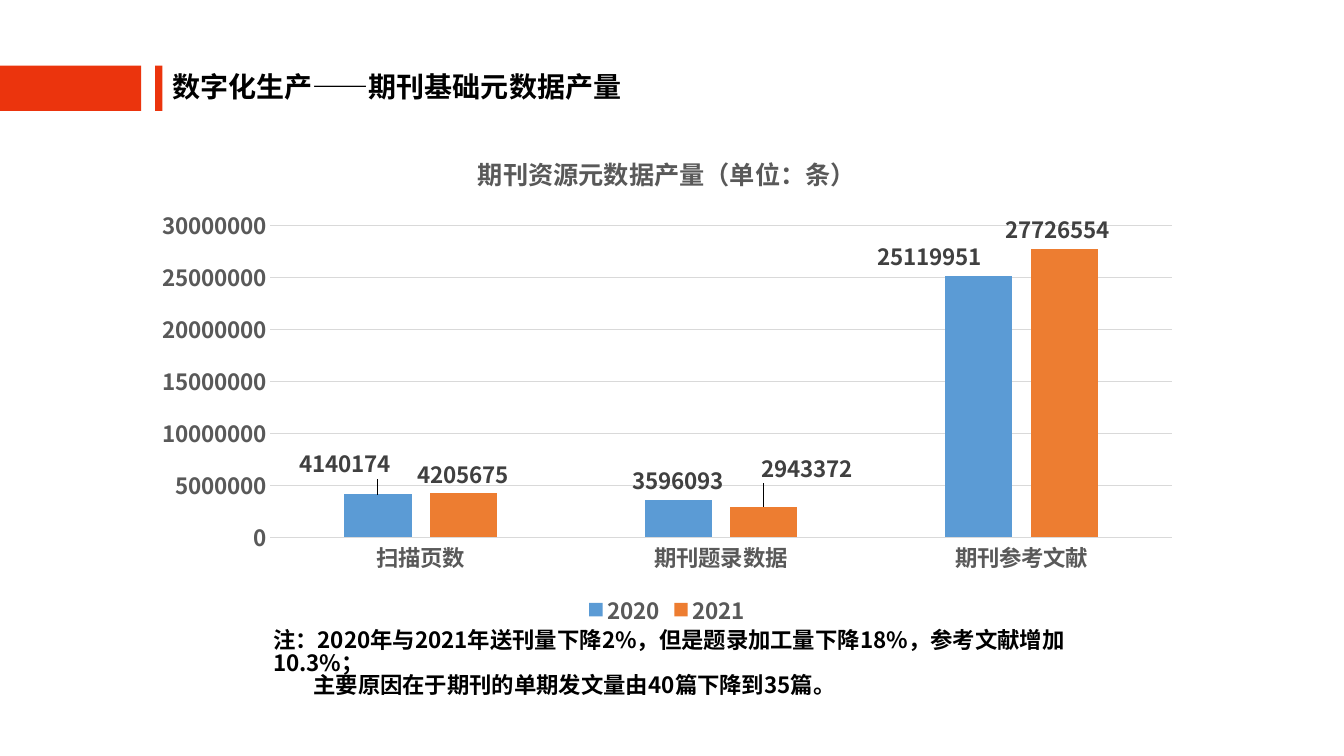
from lxml import etree
from pptx import Presentation
from pptx import util as u
from pptx.chart import data as cd
from pptx.dml.color import RGBColor
from pptx.enum import chart as ch, shapes, text
from pptx.oxml import ns

RED = RGBColor(0xEB, 0x34, 0x0D)
BLACK = RGBColor(0x00, 0x00, 0x00)
BLUE = RGBColor(0x5B, 0x9B, 0xD5)
ORANGE = RGBColor(0xED, 0x7D, 0x31)
GRAY = RGBColor(0x59, 0x59, 0x59)
DARK = RGBColor(0x40, 0x40, 0x40)
PALE = RGBColor(0xD9, 0xD9, 0xD9)

CATS = ["扫描页数", "期刊题录数据", "期刊参考文献"]
YEARS = [
    ("2020", BLUE, [4140174, 3596093, 25119951]),
    ("2021", ORANGE, [4205675, 2943372, 27726554]),
]
# Label shifts, in percent of the chart: (year, category): (across, down)
SHIFTS = {(0, 0): (-3.1, -2.2), (0, 2): (-4.7, 0),
          (1, 1): (4.1, -3.8), (1, 2): (-0.6, 0)}


class Page:
    """One slide on a grid of square cells, ten to the inch."""
    face = "Noto Sans CJK SC"
    cell = u.Inches(0.1)

    def __init__(self, deck):
        self.slide = deck.slides.add_slide(deck.slide_layouts[5])
        self.items = self.slide.shapes

    def grid(self, *cells):
        return [round(n * self.cell) for n in cells]

    def style(self, font, size, color):
        font.name, font.size, font.bold = self.face, u.Pt(size), True
        font.color.rgb = color

    def fill(self, frame, words, size):
        frame.text = words
        frame.word_wrap = True
        frame.auto_size = text.MSO_AUTO_SIZE.NONE
        for para in frame.paragraphs:
            para.alignment = text.PP_ALIGN.LEFT
            para.line_spacing = 0.83
            for run in para.runs:
                self.style(run.font, size, BLACK)
                east = etree.SubElement(run.font._element, ns.qn("a:ea"))
                east.set("typeface", self.face)

    def title(self, box, words):
        head = self.items.title
        head.left, head.top, head.width, head.height = self.grid(*box)
        self.fill(head.text_frame, words, 20)
        head.text_frame.vertical_anchor = text.MSO_ANCHOR.MIDDLE

    def bar(self, box):
        bar = self.items.add_shape(shapes.MSO_SHAPE.RECTANGLE, *self.grid(*box))
        bar.shadow.inherit = False
        bar.fill.solid()
        bar.fill.fore_color.rgb = RED
        bar.line.fill.background()

    def note(self, box, words, indent):
        frame = self.items.add_textbox(*self.grid(*box)).text_frame
        self.fill(frame, words, 16)
        last = frame.paragraphs[-1]._p.get_or_add_pPr()
        last.set("marL", "0")
        last.set("indent", str(self.grid(indent)[0]))

    def layout(self, **parts):
        """Manual chart layout, its parts in percent."""
        outer = etree.Element(ns.qn("c:layout"))
        inner = etree.SubElement(outer, ns.qn("c:manualLayout"))
        for tag, val in parts.items():
            val = val if isinstance(val, str) else f"{val / 100:.3f}"
            etree.SubElement(inner, ns.qn("c:" + tag)).set("val", val)
        return outer

    def chart(self, box, head):
        data = cd.CategoryChartData(number_format="General")
        data.categories = CATS
        for name, _, vals in YEARS:
            data.add_series(name, vals)
        kind = ch.XL_CHART_TYPE.COLUMN_CLUSTERED
        chart = self.items.add_chart(kind, *self.grid(*box), data).chart
        chart.font.name, chart.font.size = self.face, u.Pt(10)

        # Heading and legend
        chart.has_title = True
        chart.chart_title.text_frame.text = head
        chart.chart_title.include_in_layout = False
        run = chart.chart_title.text_frame.paragraphs[0].runs[0]
        self.style(run.font, 18, GRAY)
        chart.has_legend = True
        chart.legend.position = ch.XL_LEGEND_POSITION.BOTTOM
        chart.legend.include_in_layout = False
        self.style(chart.legend.font, 16, GRAY)

        # Axes
        for axis in (chart.category_axis, chart.value_axis):
            axis.major_tick_mark = axis.minor_tick_mark = ch.XL_TICK_MARK.NONE
            self.style(axis.tick_labels.font, 16, GRAY)
        amount = chart.value_axis
        amount.minimum_scale, amount.maximum_scale = 0, 30000000
        amount.major_unit = 5000000
        amount.format.line.fill.background()
        for rule in (chart.category_axis, amount.major_gridlines):
            rule.format.line.color.rgb = PALE
            rule.format.line.width = u.Pt(0.75)

        # Plot area
        area = chart._chartSpace.chart.plotArea
        for old in area.findall(ns.qn("c:layout")):
            area.remove(old)
        area.insert(0, self.layout(layoutTarget="inner", xMode="edge",
                                   yMode="edge", x=12.3, y=18.7, w=85.7, h=62.7))
        plot = chart.plots[0]
        plot.gap_width, plot.overlap, plot.vary_by_categories = 219, -27, False

        # Columns and their labels
        for row, (ser, year) in enumerate(zip(plot.series, YEARS)):
            ser.format.fill.solid()
            ser.format.fill.fore_color.rgb = year[1]
            labels = ser.data_labels
            labels.show_value = True
            labels.position = ch.XL_LABEL_POSITION.OUTSIDE_END
            self.style(labels.font, 16, DARK)
            for col in range(len(CATS)):
                if (row, col) in SHIFTS:
                    self.shift(ser, col, *SHIFTS[row, col])

    def shift(self, ser, col, x, y):
        label = ser.points[col].data_label
        label.position = ch.XL_LABEL_POSITION.OUTSIDE_END
        self.style(label.font, 16, DARK)
        for item in ser.data_labels._element.findall(ns.qn("c:dLbl")):
            mark = item.find(ns.qn("c:idx"))
            if mark.get("val") == str(col):
                mark.addnext(self.layout(x=x, y=y))


def main():
    deck = Presentation()
    deck.slide_width, deck.slide_height = u.Inches(13.33), u.Inches(7.5)
    page = Page(deck)

    # Heading band
    for left, wide in ((15.4, 0.7), (0, 14)):
        page.bar((left, 6.5, wide, 4.5))
    page.title((16.1, 6.6, 55, 4.4), "数字化生产——期刊基础元数据产量")

    # Output by year
    page.chart((14, 13.1, 104.3, 49.4), "期刊资源元数据产量（单位：条）")

    # Remark below the chart
    page.note((26.1, 62.1, 86.8, 6.4),
              "注：2020年与2021年送刊量下降2%，但是题录加工量下降18%，参考文献增加10.3%；\n"
              "主要原因在于期刊的单期发文量由40篇下降到35篇。", 4)
    deck.save("out.pptx")


if __name__ == "__main__":
    main()
